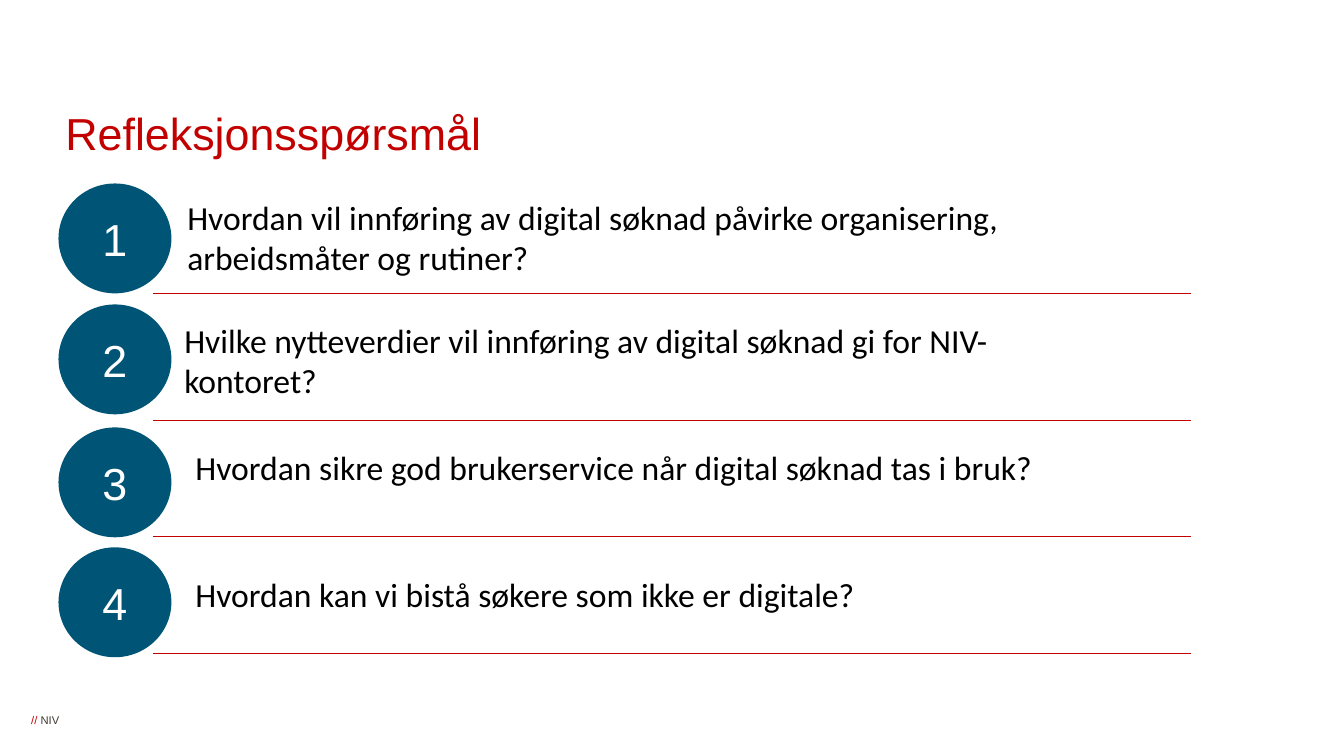
from pptx import Presentation
from pptx.dml.color import RGBColor
from pptx.enum.shapes import MSO_CONNECTOR, MSO_SHAPE
from pptx.enum.text import MSO_ANCHOR, PP_ALIGN
from pptx.oxml.ns import qn
from pptx.util import Inches, Pt
from lxml import etree

OVAL = MSO_SHAPE.OVAL
LINE = MSO_CONNECTOR.STRAIGHT
LEFT, CENTER = PP_ALIGN.LEFT, PP_ALIGN.CENTER
TOP, MIDDLE, BOTTOM = MSO_ANCHOR.TOP, MSO_ANCHOR.MIDDLE, MSO_ANCHOR.BOTTOM

RED, BLUE, GREY, WHITE, BLACK = "C30000", "005576", "3E3832", "FFFFFF", "000000"

# Circle top, rule height, text left, text top, text height, question
ROWS = [
    (1.82, 2.91, 1.76, 1.9, 0.91,
     "Hvordan vil innføring av digital søknad påvirke organisering, arbeidsmåter og rutiner?"),
    (3.02, 4.17, 1.73, 3.12, 0.91,
     "Hvilke nytteverdier vil innføring av digital søknad gi for NIV-kontoret?"),
    (4.24, 5.32, 1.84, 4.38, 0.5,
     "Hvordan sikre god brukerservice når digital søknad tas i bruk?"),
    (5.43, 6.48, 1.84, 5.64, 0.5,
     "Hvordan kan vi bistå søkere som ikke er digitale?"),
]


def color(code):
    return RGBColor.from_string(code)


def write(frame, runs, size=24, font="Arial", align=LEFT, anchor=TOP,
          wrap=True, pad=(0.1, 0.05), space=None):
    """Fill a frame with one paragraph of (text, colour) runs."""
    frame.word_wrap = wrap
    frame.vertical_anchor = anchor
    frame.margin_left = frame.margin_right = Inches(pad[0])
    frame.margin_top = frame.margin_bottom = Inches(pad[1])
    para = frame.paragraphs[0]
    para.alignment = align
    if space:
        para.line_spacing = space
    for text, code in runs:
        run = para.add_run()
        run.text = text
        run.font.size = Pt(size)
        run.font.name = font
        run.font.color.rgb = color(code)


class Page:
    def __init__(self, deck):
        self.shapes = deck.slides.add_slide(deck.slide_layouts[6]).shapes

    def text(self, box, runs, **style):
        shape = self.shapes.add_textbox(*map(Inches, box))
        write(shape.text_frame, runs, **style)

    def badge(self, top, label):
        shape = self.shapes.add_shape(
            OVAL, *map(Inches, (0.58, top, 1.12, 1.09)))
        shape.shadow.inherit = False
        shape.fill.solid()
        shape.fill.fore_color.rgb = color(BLUE)
        shape.line.fill.background()
        write(shape.text_frame, [(label, WHITE)], size=32, align=CENTER,
              anchor=MIDDLE, wrap=False, pad=(0.05, 0.05))

    def rule(self, y):
        line = self.shapes.add_connector(
            LINE, *map(Inches, (1.52, y, 11.81, y)))
        line.line.color.rgb = color(RED)
        line.line.width = Pt(0.5)
        etree.SubElement(line._element.spPr, qn("a:effectLst"))


def main():
    deck = Presentation()
    deck.slide_width, deck.slide_height = Inches(13.33), Inches(7.5)
    page = Page(deck)

    # Footer and title
    page.text((0.31, 7.08, 2.47, 0.13), [("// ", RED), ("NIV", GREY)],
              size=8, pad=(0, 0))
    page.text((0.55, 0.26, 12.23, 1.38), [("Refleksjonsspørsmål", RED)],
              size=32, anchor=BOTTOM, space=0.9)

    # Numbered questions
    for num, (top, base, left, head, high, ask) in enumerate(ROWS, 1):
        page.badge(top, str(num))
        page.rule(base)
        page.text((left, head, 9.24, high), [(ask, BLACK)], font="Calibri")

    deck.save("out.pptx")


if __name__ == "__main__":
    main()
